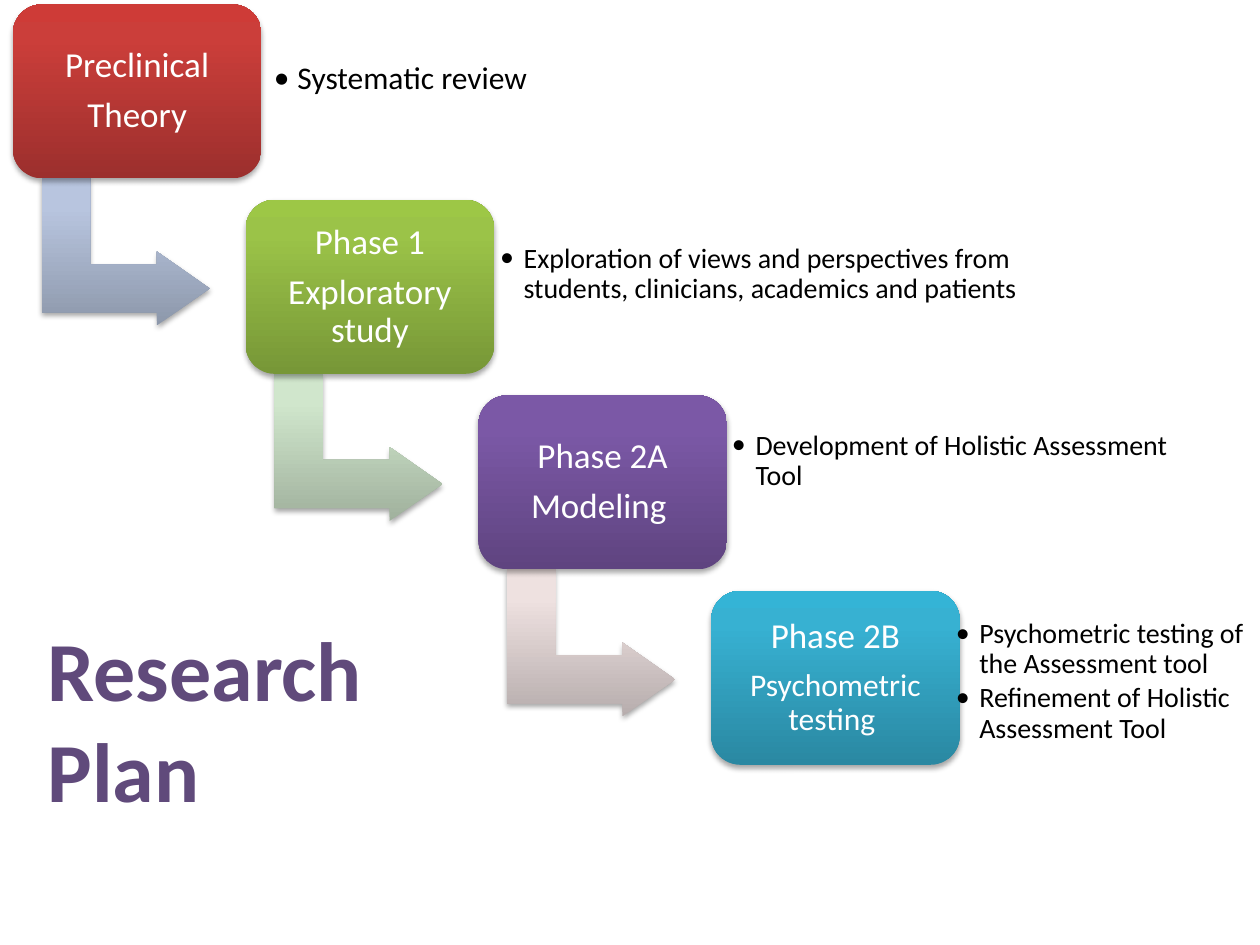
import copy
from dataclasses import dataclass

import pptx
import pptx.dml.color
import pptx.enum.shapes
import pptx.enum.text
import pptx.oxml
import pptx.oxml.ns
import pptx.util

Pt = pptx.util.Pt
RGB = pptx.dml.color.RGBColor.from_string
SHAPES = pptx.enum.shapes.MSO_SHAPE
ALIGN = pptx.enum.text.PP_ALIGN
MIDDLE = pptx.enum.text.MSO_ANCHOR.MIDDLE


@dataclass(frozen=True)
class Theme:
    font: str = "Calibri"
    title: str = "604A7B"
    card_text: str = "FFFFFF"
    note_text: str = "000000"
    title_size: int = 48
    card_size: int = 20
    large: int = 18
    note_size: int = 16
    # Gradients run from the bottom edge to the top edge
    cards: tuple = (("9C2F2D", "CB3E3A", "CE3B37"), ("779737", "9BC348", "9DC746"),
                    ("5F4480", "7B58A6", "7C57A8"), ("2A88A2", "37B1D2", "34B4D6"))
    arrows: tuple = (("8D98AB", "B8C5DF", "B8C6E0"), ("A0B19D", "D0E6CC", "D1E8CC"),
                     ("B7ADAD", "EEE1E0", "EFE1E1"))


THEME = Theme()

# Staircase geometry
FIRST_LEFT, FIRST_TOP = 7.4, 2.5
STEP_X, STEP_Y = 133, 111.7
CARD_W, CARD_H = 142, 99.4
ARROW_DX, ARROW_DY, ARROW_W, ARROW_H = 22.3, 93.3, 84.3, 96
NOTE_H = 80.6

# Card lines with sizes, notes, note size, note box (left, top, width)
PHASES = [
    ([("Preclinical", THEME.card_size), ("Theory", THEME.card_size)],
     ["Systematic review"], THEME.large, (151.5, 5.2, 166.3)),
    ([("Phase 1", THEME.card_size), ("Exploratory study", THEME.card_size)],
     ["Exploration of views and perspectives from students, clinicians, academics and patients"],
     THEME.note_size, (280.8, 116.4, 305.3)),
    ([("Phase 2A", THEME.card_size), ("Modeling ", THEME.card_size)],
     ["Development of Holistic Assessment Tool"],
     THEME.note_size, (413.3, 223.2, 283)),
    ([("Phase 2B", THEME.card_size), ("Psychometric testing ", THEME.large)],
     ["Psychometric testing of the Assessment tool", "Refinement of Holistic Assessment Tool"],
     THEME.note_size, (541.2, 349.2, 178.8)),
]


def style_surface(shape, colors):
    """Three-stop vertical gradient, no outline, soft shadow below."""
    shape.fill.gradient()
    shape.fill.gradient_angle = 90
    gradient = shape._element.spPr.find(pptx.oxml.ns.qn("a:gradFill"))
    gradient.set("rotWithShape", "0")
    stop_list = gradient.find(pptx.oxml.ns.qn("a:gsLst"))
    stop_list.append(copy.deepcopy(stop_list[-1]))
    for stop, position, color in zip(shape.fill.gradient_stops, (0, 0.8, 1), colors):
        stop.position = position
        stop.color.rgb = RGB(color)
    shape.line.fill.background()
    shape.shadow.inherit = False
    effects = shape._element.spPr.find(pptx.oxml.ns.qn("a:effectLst"))
    effects.append(pptx.oxml.parse_xml(
        f'<a:outerShdw {pptx.oxml.ns.nsdecls("a")} blurRad="{Pt(3.1)}" dist="{Pt(1.8)}" '
        'dir="5400000" rotWithShape="0"><a:srgbClr val="000000">'
        '<a:alpha val="35000"/></a:srgbClr></a:outerShdw>'))


def set_insets(frame, inset):
    frame.margin_left = frame.margin_right = Pt(inset)
    frame.margin_top = frame.margin_bottom = Pt(inset)


def write_lines(frame, lines, color, spacing=None, bold=False):
    """Fill the frame with (text, size) lines; spacing is a share of the size."""
    frame.word_wrap = True
    frame.text = "\n".join(text for text, _ in lines)
    for paragraph, (_, size) in zip(frame.paragraphs, lines):
        if spacing is not None:
            paragraph.line_spacing = 0.9
            paragraph.space_after = Pt(size * spacing)
        font = paragraph.runs[0].font
        font.name, font.size, font.bold = THEME.font, Pt(size), bold
        font.color.rgb = RGB(color)


def add_arrow(slide, left, top, width, height, colors):
    arrow = slide.shapes.add_shape(SHAPES.BENT_UP_ARROW, Pt(left), Pt(top), Pt(width), Pt(height))
    arrow.rotation = 90
    for index, value in enumerate((0.328, 0.25, 0.358)):
        arrow.adjustments[index] = value
    style_surface(arrow, colors)


def add_card(slide, left, top, width, height, lines, colors):
    card = slide.shapes.add_shape(SHAPES.ROUNDED_RECTANGLE, Pt(left), Pt(top), Pt(width), Pt(height))
    card.adjustments[0] = 0.167
    style_surface(card, colors)
    frame = card.text_frame
    set_insets(frame, 6)
    frame.vertical_anchor = MIDDLE
    write_lines(frame, lines, THEME.card_text, 0.35)
    for paragraph in frame.paragraphs:
        paragraph.alignment = ALIGN.CENTER


def add_notes(slide, left, top, width, height, notes, size):
    frame = slide.shapes.add_textbox(Pt(left), Pt(top), Pt(width), Pt(height)).text_frame
    set_insets(frame, 5)
    frame.vertical_anchor = MIDDLE
    write_lines(frame, [(note, size) for note in notes], THEME.note_text, 0.15)
    for paragraph in frame.paragraphs:
        properties = paragraph._p.get_or_add_pPr()
        properties.set("marL", str(Pt(13.5)))
        properties.set("indent", str(Pt(-13.5)))
        for bullet in (f'buFont {{}} typeface="{THEME.font}"', 'buChar {} char="•"'):
            properties.append(pptx.oxml.parse_xml(
                f'<a:{bullet.format(pptx.oxml.ns.nsdecls("a"))}/>'))


def add_title(slide, left, top, width, height):
    frame = slide.shapes.add_textbox(Pt(left), Pt(top), Pt(width), Pt(height)).text_frame
    write_lines(frame, [(word, THEME.title_size) for word in ("Research", "Plan")],
                THEME.title, bold=True)


def main():
    deck = pptx.Presentation()
    deck.slide_width, deck.slide_height = Pt(720), Pt(540)
    slide = deck.slides.add_slide(deck.slide_layouts[6])

    # Staircase of phases, each arrow tucked behind its card
    for step, (lines, notes, note_size, (note_left, note_top, note_width)) in enumerate(PHASES):
        left, top = FIRST_LEFT + step * STEP_X, FIRST_TOP + step * STEP_Y
        if step < len(THEME.arrows):
            add_arrow(slide, left + ARROW_DX, top + ARROW_DY, ARROW_W, ARROW_H, THEME.arrows[step])
        add_card(slide, left, top, CARD_W, CARD_H, lines, THEME.cards[step])
        add_notes(slide, note_left, note_top, note_width, NOTE_H, notes, note_size)

    # Title
    add_title(slide, 20.2, 349.2, 221, 123.8)
    deck.save("out.pptx")


if __name__ == "__main__":
    main()
